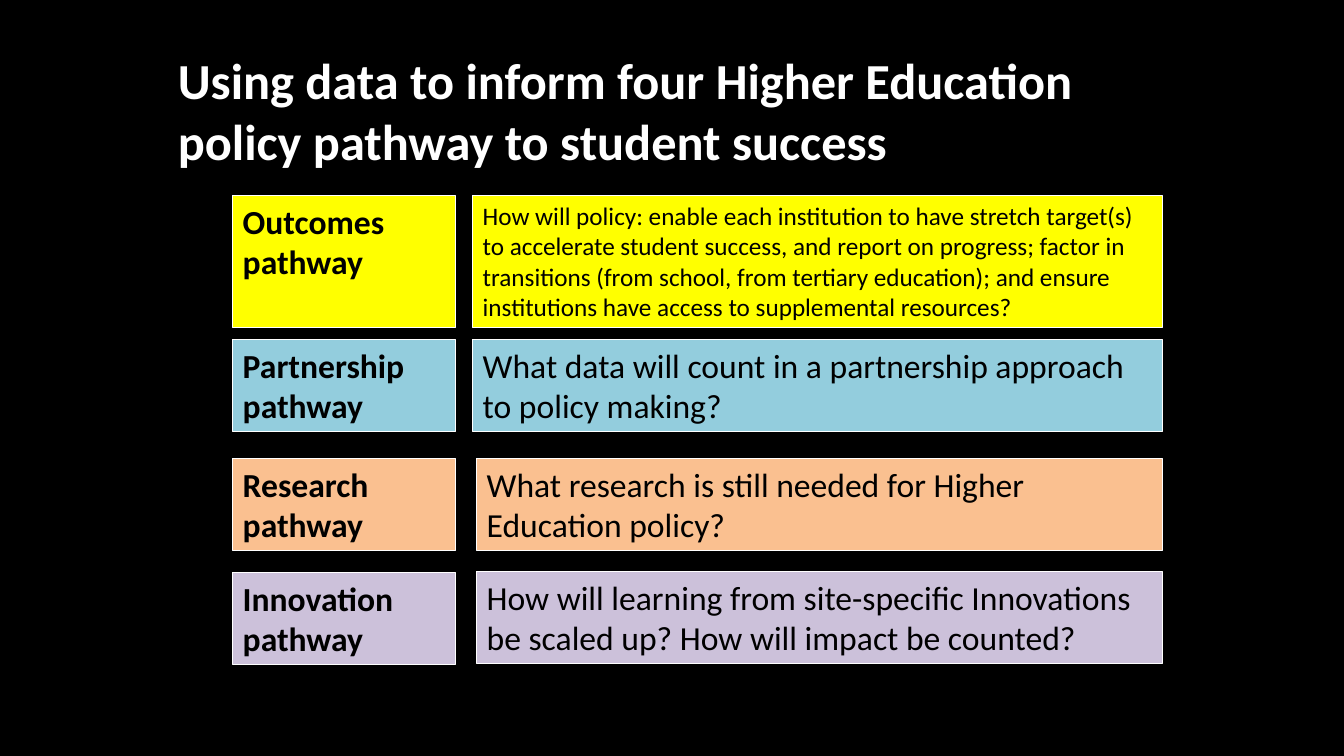
"""Build a slide of four higher education policy pathways and their questions."""
from dataclasses import dataclass

from pptx import Presentation
from pptx import util as u
from pptx.dml.color import RGBColor
from pptx.enum import shapes, text
from pptx.shapes.autoshape import Shape
from pptx.slide import Slide
from pptx.text.text import TextFrame

BLACK = RGBColor(0x00, 0x00, 0x00)
WHITE = RGBColor(0xFF, 0xFF, 0xFF)
YELLOW = RGBColor(0xFF, 0xFF, 0x00)
BLUE = RGBColor(0x93, 0xCD, 0xDD)
ORANGE = RGBColor(0xFA, 0xC0, 0x90)
LILAC = RGBColor(0xCC, 0xC1, 0xDA)

SLIDE_WIDTH, SLIDE_HEIGHT = u.Inches(13.33), u.Inches(7.5)
COLUMNS, ROWS = 160, 90
NAME_LEFT, NAME_WIDTH = 27.72, 26.52
QUESTION_RIGHT = 138.36
TALL, SHORT = 15.72, 10.92


@dataclass(frozen=True)
class Area:
    """Hold a rectangle in grid columns and rows."""

    left: float
    top: float
    width: float
    height: float

    def lengths(self) -> tuple[int, int, int, int]:
        """Return the rectangle in slide units."""
        return (
            round(SLIDE_WIDTH * self.left / COLUMNS),
            round(SLIDE_HEIGHT * self.top / ROWS),
            round(SLIDE_WIDTH * self.width / COLUMNS),
            round(SLIDE_HEIGHT * self.height / ROWS),
        )


@dataclass(frozen=True)
class Pathway:
    """Describe one pathway's name, question and place."""

    name: str
    question: str
    color: RGBColor
    name_top: float
    question_top: float
    question_left: float
    height: float = SHORT
    question_size: int = 24


PATHWAYS = (
    Pathway(
        "Outcomes pathway",
        "How will policy: enable each institution to have stretch target(s) to "
        "accelerate student success, and report on progress; factor in transitions "
        "(from school, from tertiary education); and ensure institutions have "
        "access to supplemental resources?",
        YELLOW, 23.28, 23.28, 56.28, TALL, 18,
    ),
    Pathway(
        "Partnership pathway",
        "What data will count in a partnership approach to policy making?",
        BLUE, 40.44, 40.44, 56.28,
    ),
    Pathway(
        "Research pathway",
        "What research is still needed for Higher Education policy?",
        ORANGE, 54.6, 54.6, 56.76,
    ),
    Pathway(
        "Innovation pathway",
        "How will learning from site-specific Innovations be scaled up? "
        "How will impact be counted?",
        LILAC, 68.16, 68.04, 56.76,
    ),
)


def write(frame: TextFrame, words: str, size: int, color: RGBColor, bold: bool) -> None:
    """Fill a text frame with one left-aligned paragraph."""
    frame.word_wrap = True
    frame.auto_size = text.MSO_AUTO_SIZE.NONE
    frame.vertical_anchor = text.MSO_ANCHOR.TOP
    paragraph = frame.paragraphs[0]
    paragraph.text = words
    paragraph.alignment = text.PP_ALIGN.LEFT
    font = paragraph.runs[0].font
    font.name, font.size, font.bold = "Calibri", u.Pt(size), bold
    font.color.rgb = color


def draw_panel(slide: Slide, area: Area, color: RGBColor) -> Shape:
    """Draw a filled rectangle with a thin white outline."""
    panel = slide.shapes.add_shape(shapes.MSO_SHAPE.RECTANGLE, *area.lengths())
    panel.shadow.inherit = False
    panel.fill.solid()
    panel.fill.fore_color.rgb = color
    panel.line.color.rgb = WHITE
    panel.line.width = u.Pt(0.75)
    return panel


def draw_pathway(slide: Slide, pathway: Pathway) -> None:
    """Draw the name and the question of a pathway."""
    name_area = Area(NAME_LEFT, pathway.name_top, NAME_WIDTH, pathway.height)
    question_area = Area(
        pathway.question_left,
        pathway.question_top,
        QUESTION_RIGHT - pathway.question_left,
        pathway.height,
    )
    name = draw_panel(slide, name_area, pathway.color)
    write(name.text_frame, pathway.name, 24, BLACK, True)
    question = draw_panel(slide, question_area, pathway.color)
    write(question.text_frame, pathway.question, pathway.question_size, BLACK, False)


def main() -> None:
    """Build and save the presentation."""
    deck = Presentation()
    deck.slide_width, deck.slide_height = SLIDE_WIDTH, SLIDE_HEIGHT
    slide = deck.slides.add_slide(deck.slide_layouts[6])
    slide.background.fill.solid()
    slide.background.fill.fore_color.rgb = BLACK

    headline = slide.shapes.add_textbox(*Area(20, 5.28, 120, TALL).lengths())
    write(
        headline.text_frame,
        "Using data to inform four Higher Education policy pathway to student success",
        36, WHITE, True,
    )
    for pathway in PATHWAYS:
        draw_pathway(slide, pathway)
    deck.save("out.pptx")


if __name__ == "__main__":
    main()
